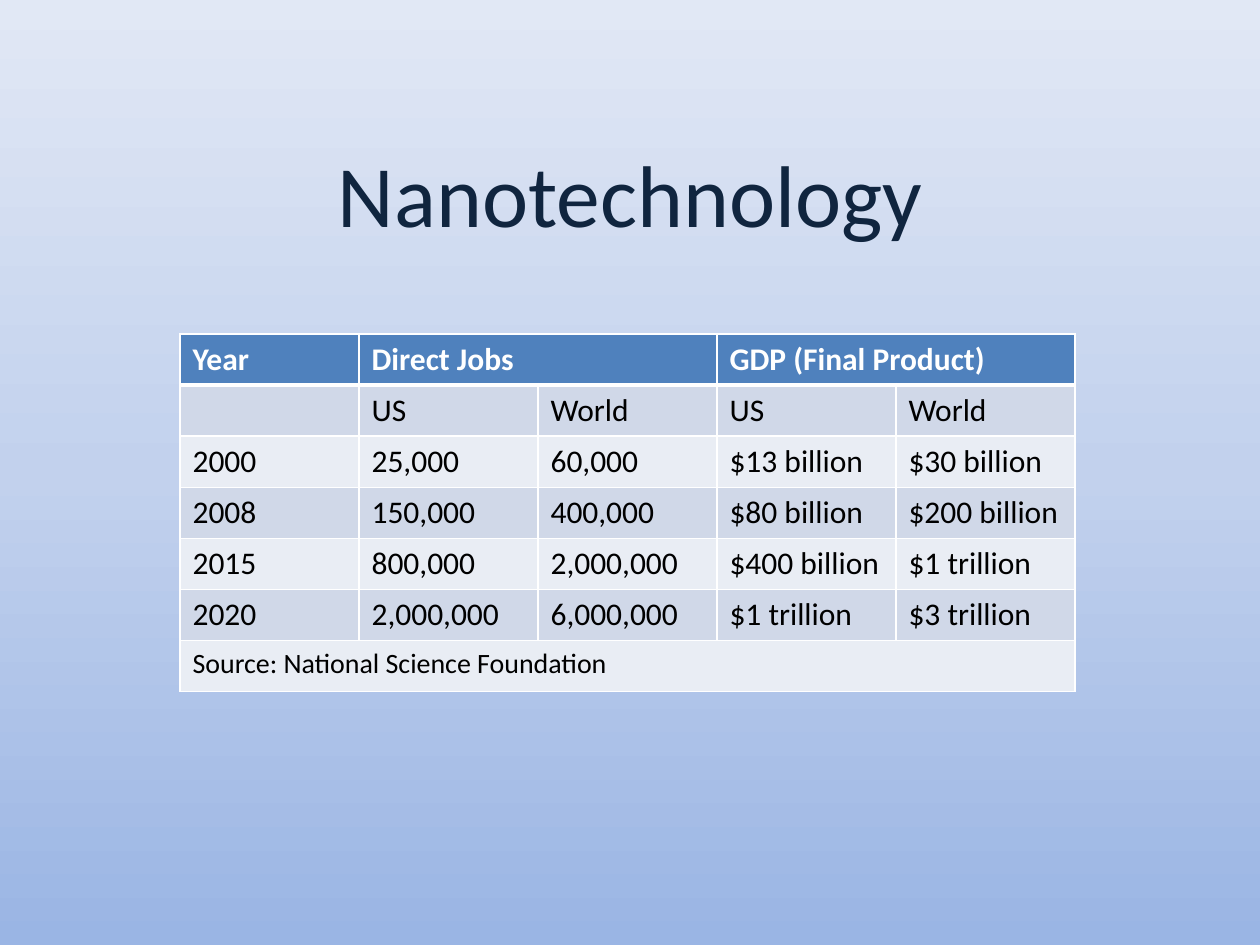
import copy

import pptx
import pptx.dml.color
import pptx.enum.text
import pptx.oxml
import pptx.oxml.ns
import pptx.util

TITLE = "Nanotechnology"
ROWS = [
    ["Year", "Direct Jobs", "", "GDP (Final Product)", ""],
    ["", "US", "World", "US", "World"],
    ["2000", "25,000", "60,000", "$13 billion", "$30 billion"],
    ["2008", "150,000", "400,000", "$80 billion", "$200 billion"],
    ["2015", "800,000", "2,000,000", "$400 billion", "$1 trillion"],
    ["2020", "2,000,000", "6,000,000", "$1 trillion", "$3 trillion"],
    ["Source: National Science Foundation", "", "", "", ""],
]
MERGES = [(0, 1, 2), (0, 3, 4), (6, 0, 4)]
BACKGROUND = [(0, "9AB5E4"), (0.5, "C2D1ED"), (1, "E1E8F5")]
HEADER_FILL = "4F81BD"
BAND_FILLS = ["E9EDF4", "D0D8E8"]
TITLE_BOX = (95, 91, 1071, 203)
TABLE_LEFT, TABLE_TOP = 180, 334
COLUMN_WIDTH, ROW_HEIGHT = 179, 51


def px(length):
    return pptx.util.Emu(round(length * 914400 / 126))


def color(value):
    return pptx.dml.color.RGBColor.from_string(value)


def write(text_frame, text, size=18, fill="000000", bold=False, align=None):
    paragraph = text_frame.paragraphs[0]
    paragraph.alignment = align
    run = paragraph.add_run()
    run.text = text
    run.font.name = "Calibri"
    run.font.size = pptx.util.Pt(size)
    run.font.bold = bold
    run.font.color.rgb = color(fill)


def set_borders(cell, **widths):
    properties = cell._tc.get_or_add_tcPr()
    for index, side in enumerate("LRTB"):
        width = pptx.util.Pt(widths.get(side, 1))
        border = pptx.oxml.parse_xml(
            f'<a:ln{side} {pptx.oxml.ns.nsdecls("a")} w="{width}">'
            '<a:solidFill><a:srgbClr val="FFFFFF"/></a:solidFill>'
            f'</a:ln{side}>'
        )
        properties.insert(index, border)


def paint_background(slide):
    fill = slide.background.fill
    fill.gradient()
    fill.gradient_angle = 90
    first_stop = fill.gradient_stops[0]._gs
    first_stop.addnext(copy.deepcopy(first_stop))
    for stop, (position, value) in zip(fill.gradient_stops, BACKGROUND):
        stop.position = position
        stop.color.rgb = color(value)


def add_jobs_table(slide):
    column_count = len(ROWS[0])
    table = slide.shapes.add_table(
        len(ROWS), column_count, px(TABLE_LEFT), px(TABLE_TOP),
        px(COLUMN_WIDTH * column_count), px(ROW_HEIGHT * len(ROWS)),
    ).table
    for column in table.columns:
        column.width = px(COLUMN_WIDTH)
    for row_index, values in enumerate(ROWS):
        table.rows[row_index].height = px(ROW_HEIGHT)
        header = row_index == 0
        for column_index, text in enumerate(values):
            cell = table.cell(row_index, column_index)
            cell.fill.solid()
            cell.fill.fore_color.rgb = color(HEADER_FILL if header else BAND_FILLS[row_index % 2])
            set_borders(cell, B=3 if header else 1, T=3 if row_index == 1 else 1)
            if text:
                write(cell.text_frame, text, bold=header,
                      size=16 if row_index == len(ROWS) - 1 else 18,
                      fill="FFFFFF" if header else "000000")
    for row, first, last in MERGES:
        table.cell(row, first).merge(table.cell(row, last))


def add_title(slide):
    text_frame = slide.shapes.add_textbox(*map(px, TITLE_BOX)).text_frame
    text_frame.word_wrap = True
    text_frame.vertical_anchor = pptx.enum.text.MSO_ANCHOR.MIDDLE
    write(text_frame, TITLE, size=50, fill="10253F", align=pptx.enum.text.PP_ALIGN.CENTER)


def main():
    presentation = pptx.Presentation()
    presentation.slide_width, presentation.slide_height = px(1260), px(945)
    slide = presentation.slides.add_slide(presentation.slide_layouts[6])
    paint_background(slide)
    add_jobs_table(slide)
    add_title(slide)
    presentation.save("out.pptx")


if __name__ == "__main__":
    main()
